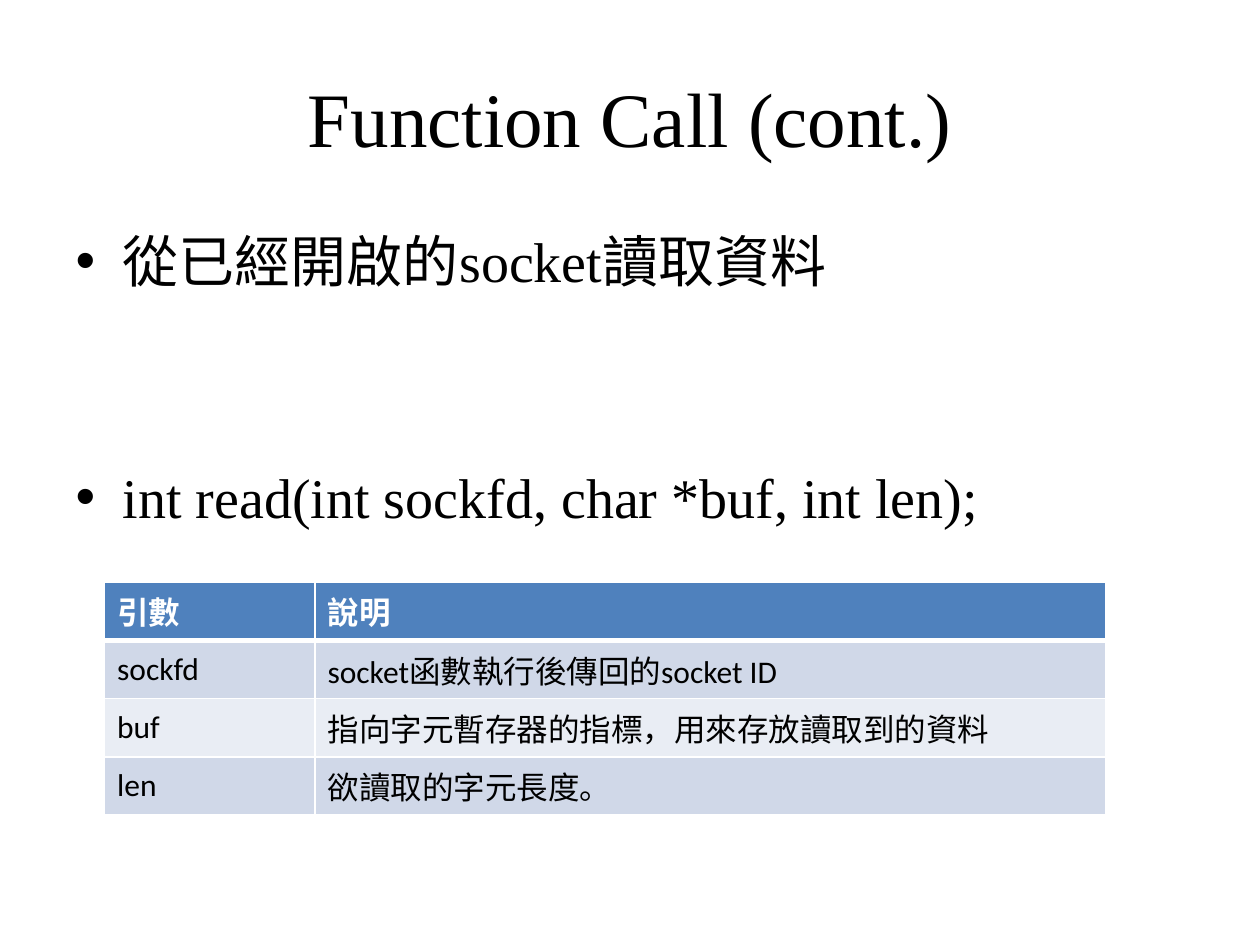
from dataclasses import dataclass

from lxml.etree import SubElement
from pptx import Presentation
from pptx.dml.color import RGBColor as RGB
from pptx.enum.text import MSO_ANCHOR as Anchor, PP_ALIGN as Align
from pptx.oxml.ns import qn
from pptx.util import Inches, Pt


@dataclass(frozen=True)
class Theme:
    text_font: str = "Times New Roman"
    table_font: str = "Calibri"
    ink: RGB = RGB(0, 0, 0)
    white: RGB = RGB(255, 255, 255)
    header: RGB = RGB(0x4F, 0x81, 0xBD)
    bands: tuple = (RGB(0xD0, 0xD8, 0xE8), RGB(0xE9, 0xED, 0xF4))
    title_size: int = 44
    body_size: int = 32
    table_size: int = 18
    rule: int = 1
    header_rule: int = 3


THEME = Theme()

HEADING = "Function Call (cont.)"
BULLETS = ["從已經開啟的socket讀取資料", "int read(int sockfd, char *buf, int len);"]
ARGUMENTS = [
    ("引數", "說明"),
    ("sockfd", "socket函數執行後傳回的socket ID"),
    ("buf", "指向字元暫存器的指標，用來存放讀取到的資料"),
    ("len", "欲讀取的字元長度。"),
]


def place(part, box):
    part.left, part.top, part.width, part.height = map(Inches, box)


def style_runs(paragraph, font, size, color, bold=False):
    for run in paragraph.runs:
        run.font.name = font
        run.font.size = Pt(size)
        run.font.color.rgb = color
        run.font.bold = bold


def add_heading(slide, box):
    heading = slide.shapes.title
    place(heading, box)
    heading.text_frame.text = HEADING
    heading.text_frame.vertical_anchor = Anchor.MIDDLE
    paragraph = heading.text_frame.paragraphs[0]
    paragraph.alignment = Align.CENTER
    style_runs(paragraph, THEME.text_font, THEME.title_size, THEME.ink)


def add_bullets(slide, box):
    body = slide.placeholders[1]
    place(body, box)
    body.text_frame.text = "\n".join(BULLETS)
    for paragraph in body.text_frame.paragraphs:
        style_runs(paragraph, THEME.text_font, THEME.body_size, THEME.ink)
    # The function signature stands three lines below the description
    body.text_frame.paragraphs[1].space_before = Pt(3 * THEME.body_size)


def set_border(cell, side, width):
    line = SubElement(cell._tc.get_or_add_tcPr(), qn(f"a:{side}"), w=str(Pt(width)))
    fill = SubElement(line, qn("a:solidFill"))
    SubElement(fill, qn("a:srgbClr"), val=str(THEME.white))


def add_arguments(slide, box, shares):
    table = slide.shapes.add_table(
        len(ARGUMENTS), len(shares), *map(Inches, box)).table
    for column, share in zip(table.columns, shares):
        column.width = Inches(box[2] * share)
    for r, row in enumerate(ARGUMENTS):
        is_header = r == 0
        for c, wording in enumerate(row):
            cell = table.cell(r, c)
            cell.text_frame.text = wording
            cell.vertical_anchor = Anchor.TOP if is_header else Anchor.MIDDLE
            style_runs(cell.text_frame.paragraphs[0], THEME.table_font,
                       THEME.table_size,
                       THEME.white if is_header else THEME.ink, is_header)
            # Borders come before the fill in the cell properties
            for side in ("lnL", "lnR", "lnT", "lnB"):
                under_header = (side, r) in (("lnB", 0), ("lnT", 1))
                set_border(cell, side,
                           THEME.header_rule if under_header else THEME.rule)
            cell.fill.solid()
            cell.fill.fore_color.rgb = (
                THEME.header if is_header else THEME.bands[(r - 1) % 2])


def main():
    deck = Presentation()
    deck.slide_width, deck.slide_height = Inches(10), Inches(7.5)
    slide = deck.slides.add_slide(deck.slide_layouts[1])
    add_heading(slide, (0.5, 0.3, 9, 1.25))
    add_bullets(slide, (0.5, 1.75, 9, 4.95))
    add_arguments(slide, (0.83, 4.62, 7.95, 1.62), shares=(0.21, 0.79))
    deck.save("out.pptx")


if __name__ == "__main__":
    main()
